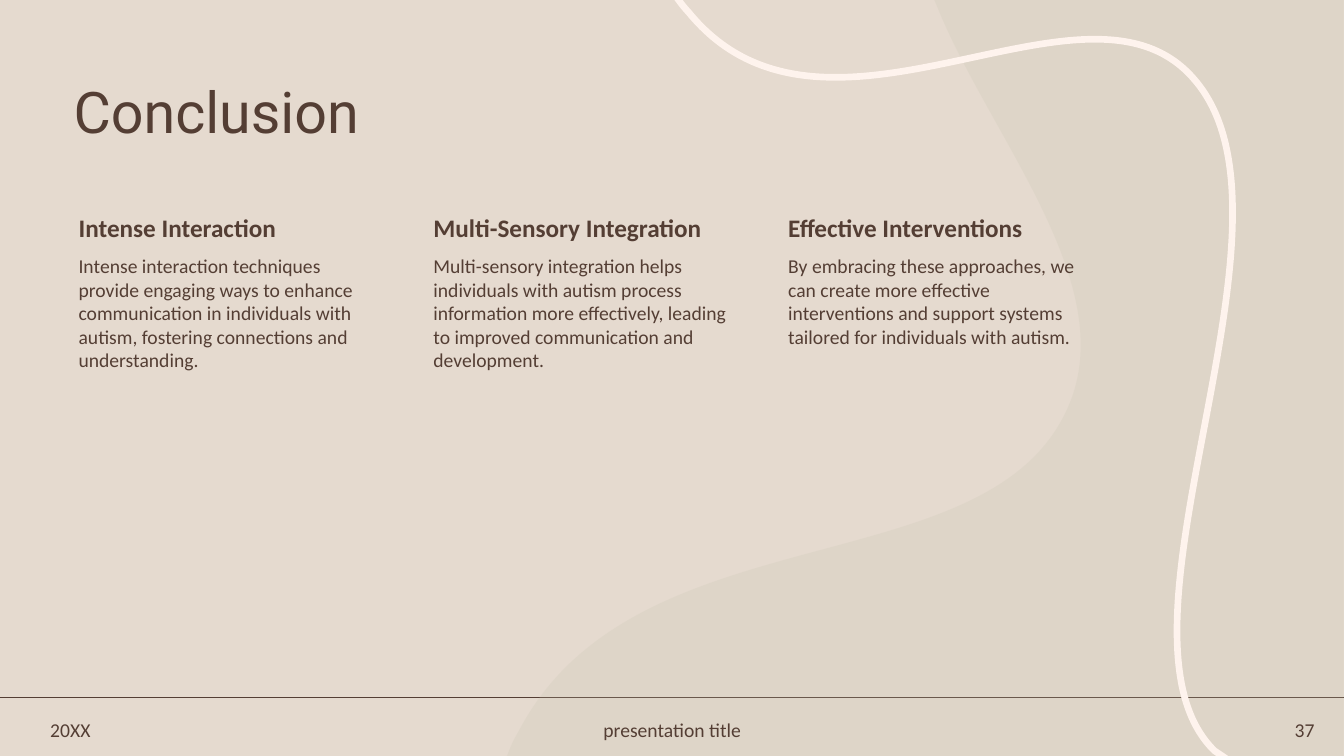
import pptx
import pptx.dml.color
import pptx.enum.shapes
import pptx.enum.text
import pptx.oxml
import pptx.oxml.ns
import pptx.util

PX = 9144  # EMU per px, 100 px to the inch
WIDTH, HEIGHT = 1333, 750
BROWN, SAND, SAGE, CREAM = "543E34", "E5DACF", "C6C4AF", "FEF3ED"
ALIGN = pptx.enum.text.PP_ALIGN
ANCHOR = pptx.enum.text.MSO_ANCHOR

TITLE = dict(size=pptx.util.Pt(41), name="Roboto", bold=False)
HEADING = dict(size=pptx.util.Pt(18), name="Calibri", bold=True)
BODY = dict(size=pptx.util.Pt(14), name="Calibri", bold=False)

# Outlines: one point is a straight segment, three points are a cubic curve
BLOB = [
    [(927, 0)], [(WIDTH, 0)], [(WIDTH, HEIGHT)], [(503, HEIGHT)], [(507, 740)],
    [(511, 731), (515, 725), (517, 721)],
    [(631, 512), (962, 578), (1052, 419)],
    [(1123, 296), (988, 146), (932, 12)],
]
RIBBON = [
    [(1217, 753)], [(1214, 751)], [(1205, 745)],
    [(1084, 627), (1307, 220), (1185, 79)],
    [(1078, -47), (820, 180), (683, 12)],
    [(680, 9), (676, 4), (671, -3)],
]

COLUMNS = [
    ("Intense Interaction",
     "Intense interaction techniques provide engaging ways to enhance "
     "communication in individuals with autism, fostering connections "
     "and understanding."),
    ("Multi-Sensory Integration",
     "Multi-sensory integration helps individuals with autism process "
     "information more effectively, leading to improved communication "
     "and development."),
    ("Effective Interventions",
     "By embracing these approaches, we can create more effective "
     "interventions and support systems tailored for individuals with "
     "autism."),
]
FOOTERS = [
    ("20XX", 40, 108, ALIGN.LEFT),
    ("presentation title", 479, 376, ALIGN.CENTER),
    ("37", 1206, 108, ALIGN.RIGHT),
]


def rgb(value):
    return pptx.dml.color.RGBColor.from_string(value)


def set_all(target, values):
    for key, value in values.items():
        setattr(target, key, value)


def emu(*lengths):
    return [length * PX for length in lengths]


def element(tag, **attributes):
    el = pptx.oxml.parse_xml(f'<a:{tag} {pptx.oxml.ns.nsdecls("a")}/>')
    for key, value in attributes.items():
        el.set(key, str(value))
    return el


def write(sp, text, font, align=ALIGN.LEFT, anchor=ANCHOR.TOP, insets=None):
    tf = sp.text_frame
    set_all(tf, dict(word_wrap=True, vertical_anchor=anchor,
                     auto_size=pptx.enum.text.MSO_AUTO_SIZE.NONE))
    if insets:
        sides = ("margin_left", "margin_top", "margin_right", "margin_bottom")
        set_all(tf, dict(zip(sides, emu(*insets))))
    p = tf.paragraphs[0]
    p.alignment = align
    r = p.add_run()
    r.text = text
    set_all(r.font, font)
    r.font.color.rgb = rgb(BROWN)
    return p


def add_text(shapes, box, text, font, **options):
    return write(shapes.add_textbox(*emu(*box)), text, font, **options)


def add_outline(s, segments, width, close):
    """Draw the segments in a box of the given width."""
    ends = [segment[-1] for segment in segments]
    builder = s.shapes.build_freeform(*ends[0], scale=PX)
    builder.add_line_segments(ends[1:], close=close)
    sp = builder.convert_to_shape()
    sp.shadow.inherit = False
    left = min(x for x, y in ends)
    top = min(y for x, y in ends)

    # Bend the segments that have control points
    outline = sp.element.spPr.find(".//" + pptx.oxml.ns.qn("a:path"))
    for step, segment in zip(list(outline), segments):
        if len(segment) == 3:
            curve = element("cubicBezTo")
            for x, y in segment:
                curve.append(element("pt", x=x - left, y=y - top))
            outline.replace(step, curve)
    outline.set("w", str(width))
    sp.width = width * PX
    return sp


def add_blob(s):
    sp = add_outline(s, BLOB, 830, True)
    sp.fill.solid()
    sp.fill.fore_color.rgb = rgb(SAGE)
    color = sp.element.spPr.find(".//" + pptx.oxml.ns.qn("a:srgbClr"))
    color.append(element("alpha", val=20000))
    sp.line.fill.background()


def add_ribbon(s):
    sp = add_outline(s, RIBBON, 552, False)
    sp.fill.background()
    sp.line.color.rgb = rgb(CREAM)
    sp.line.width = pptx.util.Pt(4.75)


def add_rule(s, y):
    line = s.shapes.add_connector(
        pptx.enum.shapes.MSO_CONNECTOR.STRAIGHT, *emu(0, y, WIDTH, y))
    line.line.color.rgb = rgb(BROWN)
    line.line.width = pptx.util.Pt(1.25)
    line.element.spPr.append(element("effectLst"))


def add_title(s, text):
    sp = s.shapes.title
    set_all(sp, dict(zip(("left", "top", "width", "height"),
                         emu(63, 77, 1150, 74))))
    write(sp, text, TITLE, anchor=ANCHOR.MIDDLE).line_spacing = 0.9
    # Bring the title in front of the background curves
    sp.element.getparent().append(sp.element)


def add_columns(s):
    shapes = s.shapes.add_group_shape().shapes
    for i, (heading, body) in enumerate(COLUMNS):
        x = 63 + 352 * i
        add_text(shapes, (x, 208, 320, 42), heading, HEADING,
                 insets=(15, 3, 3, 3))
        add_text(shapes, (x, 250, 320, 382), body, BODY,
                 insets=(15, 2, 2, 2))


def main():
    prs = pptx.Presentation()
    prs.slide_width = pptx.util.Inches(40 / 3)
    prs.slide_height = HEIGHT * PX
    s = prs.slides.add_slide(prs.slide_layouts[5])

    # Background
    s.background.fill.solid()
    s.background.fill.fore_color.rgb = rgb(SAND)
    add_rule(s, 692)
    add_blob(s)
    add_ribbon(s)

    # Title and footer
    add_title(s, "Conclusion")
    for text, x, width, align in FOOTERS:
        add_text(s.shapes, (x, 707, width, 34), text, BODY,
                 align=align, anchor=ANCHOR.MIDDLE)

    # Three takeaways
    add_columns(s)
    prs.save("out.pptx")


if __name__ == "__main__":
    main()
